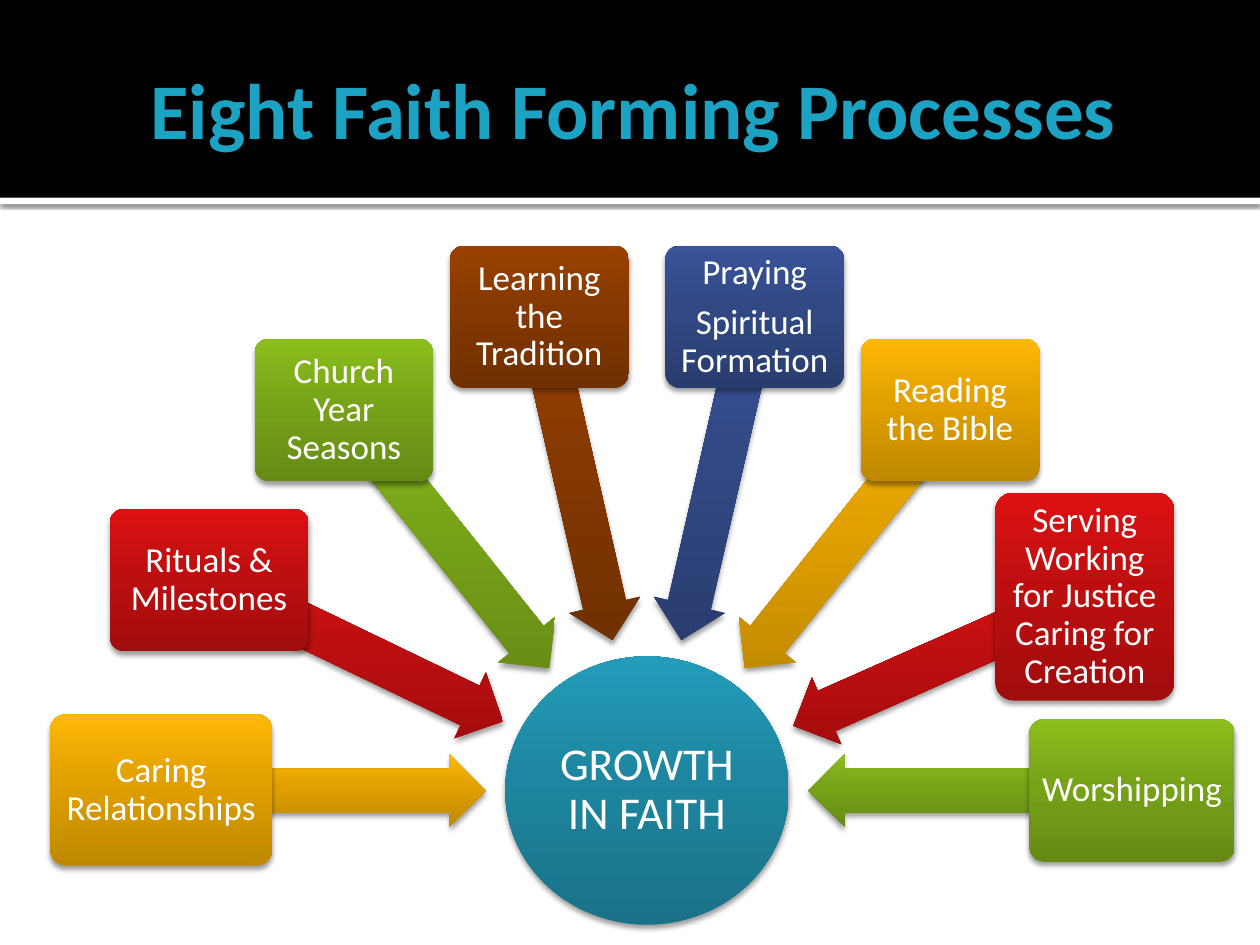
from dataclasses import dataclass
from math import cos, hypot, radians, sin

from lxml import etree
from pptx import Presentation
from pptx.dml.color import RGBColor
from pptx.enum.shapes import MSO_SHAPE as Preset
from pptx.enum.text import MSO_ANCHOR as Anchor, MSO_AUTO_SIZE as AutoSize, PP_ALIGN as Align
from pptx.oxml import parse_xml
from pptx.oxml.ns import nsdecls, qn
from pptx.shapes.autoshape import Shape
from pptx.slide import Slide
from pptx.text.text import TextFrame
from pptx.util import Inches, Pt

Gradient = tuple[str, str, str]


@dataclass(frozen=True)
class Theme:
    font: str = "Calibri"
    title_size: int = 45
    hub_size: int = 26
    label_size: int = 20
    title: str = "1CA2C3"
    black: str = "000000"
    white: str = "FFFFFF"
    teal: Gradient = ("1A7288", "1E86A0", "239CBA")
    gold: Gradient = ("BF8800", "E1A000", "FFB807")
    red: Gradient = ("A10C0D", "BE0F10", "DD1112")
    green: Gradient = ("658B15", "77A319", "8BBE1D")
    brown: Gradient = ("703000", "843800", "9A4200")
    blue: Gradient = ("2A3D6F", "314883", "3A5399")


@dataclass(frozen=True)
class Area:
    left: float
    top: float
    width: float
    height: float


@dataclass(frozen=True)
class Process:
    lines: tuple[str, ...]
    area: Area
    colors: Gradient
    angle: float
    arrow_length: float


THEME = Theme()
HUB = Area(4.01, 5.21, 2.25, 2.13)
ARROW_GAP = 0.155
ARROW_HEIGHT = 0.58
STEP = 180 / 7

PROCESSES = (
    Process(("Caring Relationships",), Area(0.4, 5.67, 1.76, 1.2), THEME.gold, 180, 2.58),
    Process(("Rituals & Milestones",), Area(0.87, 4.04, 1.58, 1.13), THEME.red, 180 + STEP, 2.59),
    Process(("Church Year Seasons",), Area(2.02, 2.69, 1.42, 1.13), THEME.green, 180 + 2 * STEP, 2.62),
    Process(("Learning the Tradition",), Area(3.57, 1.95, 1.42, 1.13), THEME.brown, 180 + 3 * STEP, 2.63),
    Process(("Praying", "Spiritual Formation"), Area(5.28, 1.95, 1.42, 1.13), THEME.blue, 180 + 4 * STEP, 2.63),
    Process(("Reading the Bible",), Area(6.83, 2.69, 1.42, 1.13), THEME.gold, 180 + 5 * STEP, 2.62),
    Process(("Serving Working for Justice Caring for Creation",), Area(7.9, 3.91, 1.42, 1.65), THEME.red, 336.1, 2.54),
    Process(("Worshipping",), Area(8.17, 5.71, 1.63, 1.13), THEME.green, 0, 2.58),
)


def add_plain_shape(page: Slide, preset: Preset, area: Area) -> Shape:
    shape = page.shapes.add_shape(
        preset, Inches(area.left), Inches(area.top), Inches(area.width), Inches(area.height)
    )
    shape.shadow.inherit = False
    shape.line.fill.background()
    return shape


def add_band(page: Slide, area: Area, color: str) -> Shape:
    band = add_plain_shape(page, Preset.RECTANGLE, area)
    band.fill.solid()
    band.fill.fore_color.rgb = RGBColor.from_string(color)
    return band


def set_shadow(shape: Shape, opacity: int, blur: float, distance: float) -> None:
    effects = shape.element.spPr.find(qn("a:effectLst"))
    shadow = etree.SubElement(
        effects, qn("a:outerShdw"), blurRad=str(Pt(blur)), dist=str(Pt(distance)),
        dir="5400000", rotWithShape="0",
    )
    color = etree.SubElement(shadow, qn("a:srgbClr"), val=THEME.black)
    etree.SubElement(color, qn("a:alpha"), val=str(opacity * 1000))


def add_gradient_shape(page: Slide, preset: Preset, area: Area, colors: Gradient) -> Shape:
    shape = add_plain_shape(page, preset, area)
    stops = "".join(
        f'<a:gs pos="{place * 1000}"><a:srgbClr val="{color}"/></a:gs>'
        for place, color in zip((0, 55, 100), colors)
    )
    gradient = parse_xml(
        f'<a:gradFill {nsdecls("a")} rotWithShape="0"><a:gsLst>{stops}</a:gsLst>'
        '<a:lin ang="16200000" scaled="0"/></a:gradFill>'
    )
    shape.element.spPr.find(qn("a:prstGeom")).addnext(gradient)
    set_shadow(shape, opacity=38, blur=3.1, distance=2)
    return shape


def set_insets(frame: TextFrame, left: float, other: float) -> None:
    frame.margin_left = Inches(left)
    frame.margin_top = frame.margin_right = frame.margin_bottom = Inches(other)


def write_label(shape: Shape, lines: tuple[str, ...], size: int, inset: float) -> None:
    frame = shape.text_frame
    frame.word_wrap = True
    frame.vertical_anchor = Anchor.MIDDLE
    set_insets(frame, inset, inset)
    frame.text = "\n".join(lines)
    for para in frame.paragraphs:
        para.alignment = Align.CENTER
        para.line_spacing = 0.9
        para.space_after = Pt(size * 0.35)
        para.font.name = THEME.font
        para.font.size = Pt(size)
        para.font.color.rgb = RGBColor.from_string(THEME.white)


def add_arrow(page: Slide, process: Process) -> None:
    across, down = cos(radians(process.angle)), sin(radians(process.angle))
    tip = hypot((HUB.width / 2 + ARROW_GAP) * across, (HUB.height / 2 + ARROW_GAP) * down)
    reach = tip + process.arrow_length / 2
    center_x = HUB.left + HUB.width / 2 + reach * across
    center_y = HUB.top + HUB.height / 2 + reach * down
    area = Area(
        center_x - process.arrow_length / 2, center_y - ARROW_HEIGHT / 2,
        process.arrow_length, ARROW_HEIGHT,
    )
    arrow = add_gradient_shape(page, Preset.LEFT_ARROW, area, process.colors)
    arrow.adjustments[0] = 0.6
    arrow.adjustments[1] = 0.5
    arrow.rotation = process.angle


def add_process(page: Slide, process: Process) -> None:
    add_arrow(page, process)
    box = add_gradient_shape(page, Preset.ROUNDED_RECTANGLE, process.area, process.colors)
    box.adjustments[0] = 0.1
    write_label(box, process.lines, THEME.label_size, 0.04)


def add_title(page: Slide, text: str) -> None:
    title = page.shapes.title
    title.left, title.top = Inches(0.5), Inches(0.17)
    title.width, title.height = Inches(9), Inches(1.37)
    frame = title.text_frame
    frame.text = text
    frame.word_wrap = True
    frame.auto_size = AutoSize.NONE
    frame.vertical_anchor = Anchor.MIDDLE
    set_insets(frame, 0.1, 0.05)
    para = frame.paragraphs[0]
    para.alignment = Align.CENTER
    para.font.name = THEME.font
    para.font.size = Pt(THEME.title_size)
    para.font.bold = True
    para.font.color.rgb = RGBColor.from_string(THEME.title)
    title.element.getparent().append(title.element)


def main() -> None:
    deck = Presentation()
    deck.slide_width, deck.slide_height = Inches(10), Inches(7.5)
    page = deck.slides.add_slide(deck.slide_layouts[5])
    strip = add_band(page, Area(0, 1.57, 10, 0.05), THEME.white)
    set_shadow(strip, opacity=60, blur=2.5, distance=0.8)
    add_band(page, Area(0, 0, 10, 1.57), THEME.black)
    hub = add_gradient_shape(page, Preset.OVAL, HUB, THEME.teal)
    write_label(hub, ("GROWTH IN FAITH",), THEME.hub_size, 0.02)
    for process in PROCESSES:
        add_process(page, process)
    add_title(page, "Eight Faith Forming Processes")
    deck.save("out.pptx")


if __name__ == "__main__":
    main()
